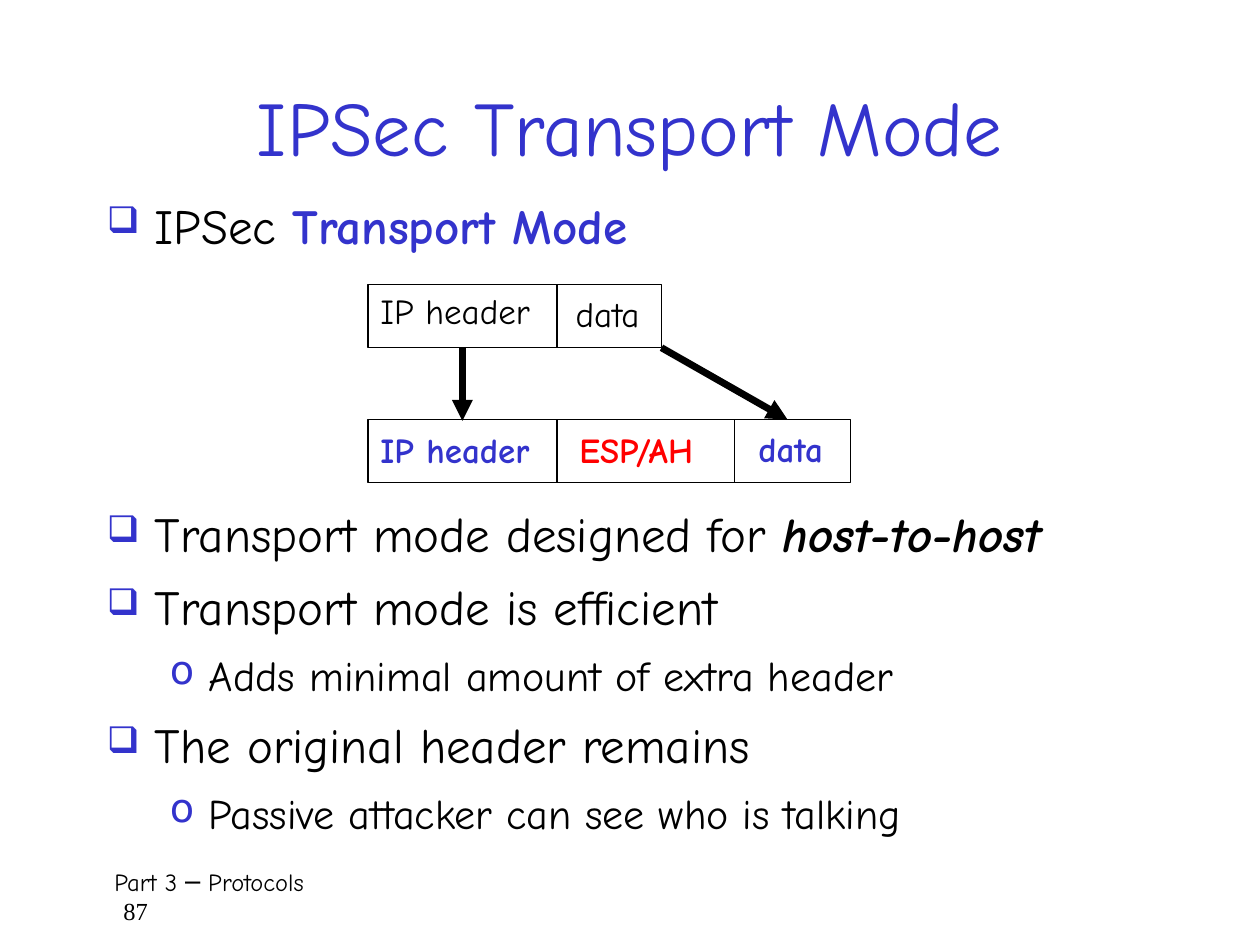
from dataclasses import dataclass

from lxml.etree import SubElement
from pptx import Presentation
from pptx.dml.color import RGBColor
from pptx.enum.shapes import MSO_CONNECTOR as CONNECTOR, MSO_SHAPE as SHAPE
from pptx.enum.text import MSO_ANCHOR as ANCHOR, PP_ALIGN as ALIGN
from pptx.oxml.ns import qn
from pptx.util import Inches, Pt


@dataclass(frozen=True)
class Theme:
    black: str = "000000"
    blue: str = "3333CC"
    red: str = "FF0000"
    font: str = "Comic Neue"
    number_font: str = "Times New Roman"
    title: int = 44
    bullet: int = 28
    sub_bullet: int = 24
    label: int = 20
    footer: int = 14
    thin: float = 0.75
    thick: float = 4


THEME = Theme()

# Per level: text size, left margin, hanging indent, bullet sign, bullet size in %
LEVELS = [
    (THEME.bullet, 0.38, -0.38, "❑", 75),
    (THEME.sub_bullet, 0.81, -0.31, "o", 95),
]


def add_box(slide, left, top, width, height):
    box = slide.shapes.add_textbox(*map(Inches, (left, top, width, height)))
    box.text_frame.word_wrap = True
    return box.text_frame


def add_run(paragraph, text, size, color=THEME.black, bold=False, italic=False,
            font=THEME.font):
    run = paragraph.add_run()
    run.text = text
    run.font.name = font
    run.font.size = Pt(size)
    run.font.bold = bold
    run.font.italic = italic
    run.font.color.rgb = RGBColor.from_string(color)


def indent(paragraph, margin, hanging=0):
    properties = paragraph._p.get_or_add_pPr()
    properties.set("marL", str(Inches(margin)))
    properties.set("indent", str(Inches(hanging)))
    return properties


def add_bullets(slide, place, items, line_spacing=1.0, space_after=0):
    """Each item is a level and its runs, as (text, style) pairs."""
    frame = add_box(slide, *place)
    for number, (level, runs) in enumerate(items):
        paragraph = frame.add_paragraph() if number else frame.paragraphs[0]
        size, margin, hanging, sign, percent = LEVELS[level]
        paragraph.level = level
        paragraph.line_spacing = line_spacing
        paragraph.space_before = Pt(size * 0.2)
        paragraph.space_after = Pt(space_after)
        properties = indent(paragraph, margin, hanging)
        bullet_color = SubElement(properties, qn("a:buClr"))
        SubElement(bullet_color, qn("a:srgbClr"), val=THEME.blue)
        SubElement(properties, qn("a:buSzPct"), val=str(percent * 1000))
        SubElement(properties, qn("a:buChar"), char=sign)
        for text, style in runs:
            add_run(paragraph, text, size, **style)


def add_line(slide, start, end, width=THEME.thin, arrow=False):
    line = slide.shapes.add_connector(
        CONNECTOR.STRAIGHT, *map(Inches, (*start, *end)))
    line.line.color.rgb = RGBColor.from_string(THEME.black)
    line.line.width = Pt(width)
    if arrow:
        SubElement(line.line._get_or_add_ln(), qn("a:tailEnd"), type="triangle")
    SubElement(line._element.spPr, qn("a:effectLst"))


def add_packet(slide, top, edges, fields, height=0.5):
    """A framed packet; edges are the x positions around its fields."""
    left, right = edges[0], edges[-1]
    frame = slide.shapes.add_shape(
        SHAPE.RECTANGLE, *map(Inches, (left, top, right - left, height)))
    frame.shadow.inherit = False
    frame.fill.background()
    frame.line.color.rgb = RGBColor.from_string(THEME.black)
    frame.line.width = Pt(THEME.thin)
    for divider in edges[1:-1]:
        add_line(slide, (divider, top), (divider, top + height))
    for text, x, y, width, style in fields:
        label = add_box(slide, x, y, width, 0.49)
        add_run(label.paragraphs[0], text, THEME.label, **style)


def add_title(slide, text):
    frame = add_box(slide, 0.75, 0.5, 8.5, 1)
    frame.vertical_anchor = ANCHOR.MIDDLE
    title = frame.paragraphs[0]
    title.alignment = ALIGN.CENTER
    add_run(title, text, THEME.title, THEME.blue)


def add_footer(slide, text, page):
    frame = add_box(slide, 0.75, 6.83, 8.58, 0.5)
    part = frame.paragraphs[0]
    indent(part, 0.06)
    add_run(part, text, THEME.footer)
    number = frame.add_paragraph()
    indent(number, 0.13)
    add_run(number, page, THEME.footer, font=THEME.number_font)


def main():
    deck = Presentation()
    deck.slide_width, deck.slide_height = Inches(10), Inches(7.5)
    slide = deck.slides.add_slide(deck.slide_layouts[6])

    # Heading
    add_title(slide, "IPSec Transport Mode")
    blue_bold = {"color": THEME.blue, "bold": True}
    add_bullets(slide, (0.75, 1.5, 8.17, 0.67), [
        (0, [("IPSec ", {}), ("Transport Mode", blue_bold)]),
    ])

    # Packet before and after IPSec
    add_packet(slide, 2.26, [2.92, 4.42, 5.25], [
        ("IP header", 2.92, 2.25, 1.48, {}),
        ("data", 4.47, 2.27, 0.78, {}),
    ])
    add_packet(slide, 3.33, [2.92, 4.42, 5.83, 6.75], [
        ("IP header", 2.92, 3.35, 1.54, blue_bold),
        ("ESP/AH", 4.5, 3.35, 1.27, {"color": THEME.red, "bold": True}),
        ("data", 5.92, 3.34, 0.8, blue_bold),
    ])
    for start, end in [((3.67, 2.76), (3.67, 3.34)), ((5.25, 2.76), (6.25, 3.33))]:
        add_line(slide, start, end, THEME.thick, arrow=True)

    # Properties of the mode
    add_bullets(slide, (0.75, 4, 8.75, 2.75), [
        (0, [("Transport mode designed for ", {}),
             ("host-to-host", {"bold": True, "italic": True})]),
        (0, [("Transport mode is efficient", {})]),
        (1, [("Adds minimal amount of extra header", {})]),
        (0, [("The original header remains", {})]),
        (1, [("Passive attacker can see who is talking", {})]),
    ], line_spacing=0.9, space_after=6)

    add_footer(slide, "Part 3 ─ Protocols", "87")
    deck.save("out.pptx")


if __name__ == "__main__":
    main()
